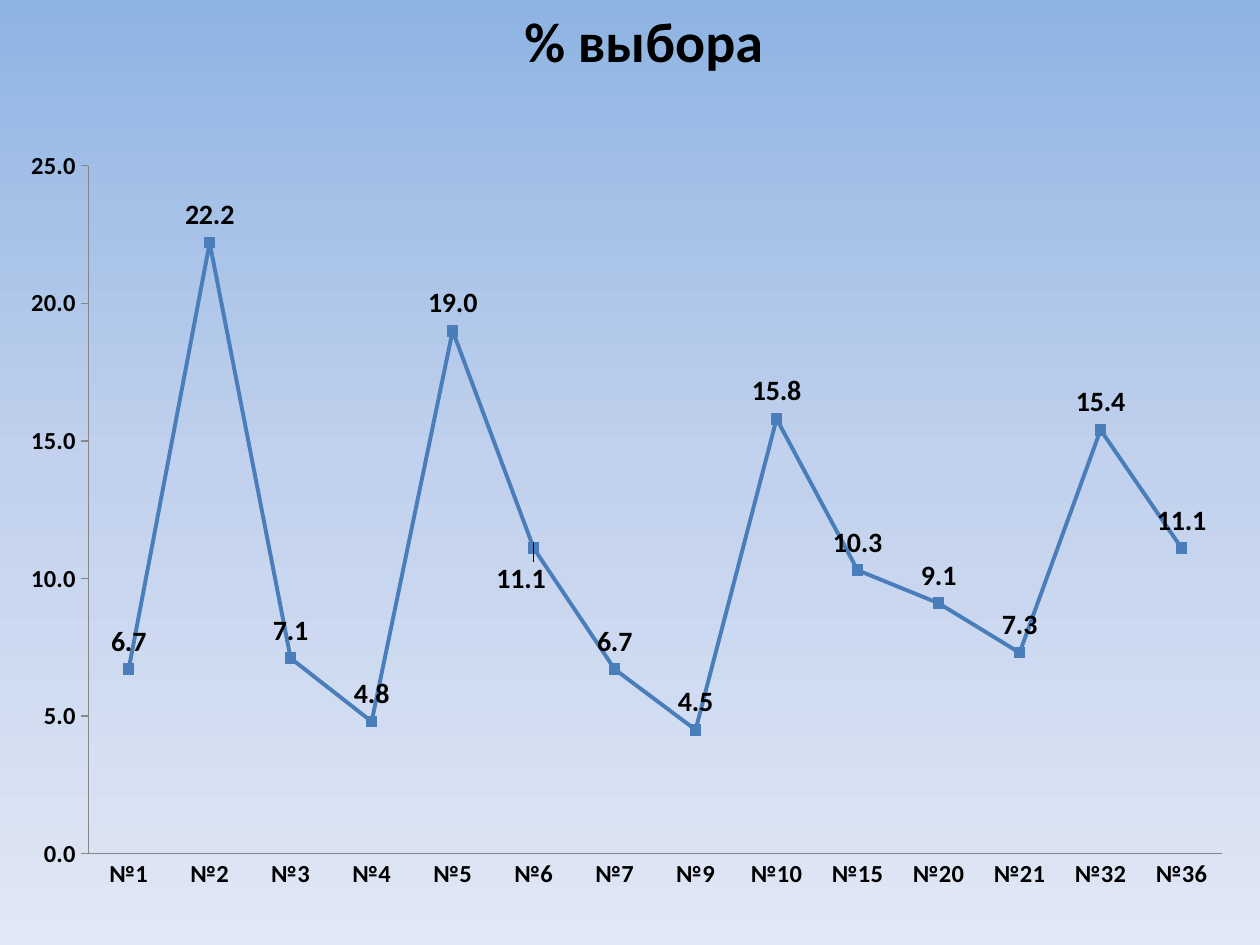
from copy import deepcopy
from dataclasses import dataclass

from lxml.etree import SubElement
from pptx import Presentation
from pptx.chart.data import CategoryChartData
from pptx.dml.color import RGBColor
from pptx.enum.chart import XL_CHART_TYPE as ChartType
from pptx.enum.chart import XL_LABEL_POSITION as LabelPosition
from pptx.enum.chart import XL_MARKER_STYLE as MarkerStyle
from pptx.enum.chart import XL_TICK_MARK as TickMark
from pptx.enum.text import MSO_AUTO_SIZE as AutoSize
from pptx.oxml.ns import qn
from pptx.util import Emu, Pt


@dataclass(frozen=True)
class Theme:
    font: str = "Calibri"
    text: str = "000000"
    line: str = "4A7EBB"
    marker: str = "4F81BD"
    axis: str = "868686"
    backdrop: tuple = ((0, "8EB4E3"), (0.5, "C2D1ED"), (1, "E1E8F5"))
    title_size: int = 32
    axis_size: int = 14
    label_size: int = 16
    base_size: int = 10


THEME = Theme()
EMU_PER_PX = 914400 / 126
NUMBER_FORMAT = "0.0"
CHOICES = {
    "№1": 6.7, "№2": 22.2, "№3": 7.1, "№4": 4.8, "№5": 19.0,
    "№6": 11.1, "№7": 6.7, "№9": 4.5, "№10": 15.8, "№15": 10.3,
    "№20": 9.1, "№21": 7.3, "№32": 15.4, "№36": 11.1,
}


def px(length):
    return Emu(round(length * EMU_PER_PX))


def color(value):
    return RGBColor.from_string(value)


def style_font(font, size, bold=True):
    font.name = THEME.font
    font.size = Pt(size)
    font.bold = bold
    font.color.rgb = color(THEME.text)


def paint_background(page):
    fill = page.background.fill
    fill.gradient()
    fill.gradient_angle = 270
    first = fill.gradient_stops[0]._gs
    first.addnext(deepcopy(first))
    for stop, (position, value) in zip(fill.gradient_stops, THEME.backdrop):
        stop.position = position
        stop.color.rgb = color(value)


def add_title(page, text, left, top, width, height):
    box = page.shapes.add_textbox(px(left), px(top), px(width), px(height))
    frame = box.text_frame
    frame.word_wrap = False
    frame.auto_size = AutoSize.SHAPE_TO_FIT_TEXT
    frame.text = text
    style_font(frame.paragraphs[0].runs[0].font, THEME.title_size)


def fill_layout(layout, **settings):
    manual = SubElement(layout, qn("c:manualLayout"))
    for name, value in settings.items():
        SubElement(manual, qn(f"c:{name}")).set("val", str(value))


def place_plot(chart):
    plot_area = chart._chartSpace.find(f".//{qn('c:plotArea')}")
    layout = plot_area.find(qn("c:layout"))
    if layout is None:
        layout = SubElement(plot_area, qn("c:layout"))
        plot_area.insert(0, layout)
    fill_layout(layout, layoutTarget="inner", xMode="edge", yMode="edge",
                x=0.07, y=0.06, w=0.9, h=0.83)


def style_axis(axis, tick_mark):
    axis.has_major_gridlines = False
    axis.major_tick_mark = tick_mark
    axis.minor_tick_mark = TickMark.NONE
    axis.format.line.color.rgb = color(THEME.axis)
    axis.format.line.width = Pt(0.75)
    style_font(axis.tick_labels.font, THEME.axis_size)


def style_series(series):
    series.smooth = False
    series.format.line.color.rgb = color(THEME.line)
    series.format.line.width = Pt(2.25)
    marker = series.marker
    marker.style = MarkerStyle.SQUARE
    marker.size = 6
    marker.format.fill.solid()
    marker.format.fill.fore_color.rgb = color(THEME.marker)
    marker.format.line.color.rgb = color(THEME.line)


def add_labels(series):
    labels = series.data_labels
    labels.show_value = True
    labels.position = LabelPosition.ABOVE
    labels.number_format = NUMBER_FORMAT
    labels.number_format_is_linked = False
    style_font(labels.font, THEME.label_size)


def shift_label(series, index, x, y):
    label = series.points[index].data_label
    style_font(label.font, THEME.label_size)
    label.position = LabelPosition.ABOVE
    element = series._element.find(f".//{qn('c:dLbl')}")
    layout = SubElement(element, qn("c:layout"))
    element.find(qn("c:idx")).addnext(layout)
    fill_layout(layout, x=x, y=y)


def add_line_chart(page, values, left, top, width, height):
    data = CategoryChartData(number_format=NUMBER_FORMAT)
    data.categories = list(values)
    data.add_series("Series 1", list(values.values()))
    chart = page.shapes.add_chart(
        ChartType.LINE_MARKERS_STACKED,
        px(left), px(top), px(width), px(height), data,
    ).chart
    chart.has_title = False
    chart.has_legend = False
    style_font(chart.font, THEME.base_size, bold=False)
    style_axis(chart.category_axis, TickMark.NONE)
    style_axis(chart.value_axis, TickMark.OUTSIDE)
    chart.value_axis.minimum_scale = 0
    chart.value_axis.maximum_scale = 25
    chart.value_axis.major_unit = 5
    chart.value_axis.tick_labels.number_format = NUMBER_FORMAT
    chart.value_axis.tick_labels.number_format_is_linked = False
    place_plot(chart)
    plot = chart.plots[0]
    plot.vary_by_categories = False
    series = plot.series[0]
    style_series(series)
    add_labels(series)
    shift_label(series, list(values).index("№6"), x=-0.01, y=0.07)


def main():
    deck = Presentation()
    deck.slide_width, deck.slide_height = px(1260), px(945)
    page = deck.slides.add_slide(deck.slide_layouts[6])
    paint_background(page)
    add_title(page, "% выбора", 512, 0, 266, 81)
    add_line_chart(page, CHOICES, 0, 116, 1260, 829)
    deck.save("out.pptx")


if __name__ == "__main__":
    main()
